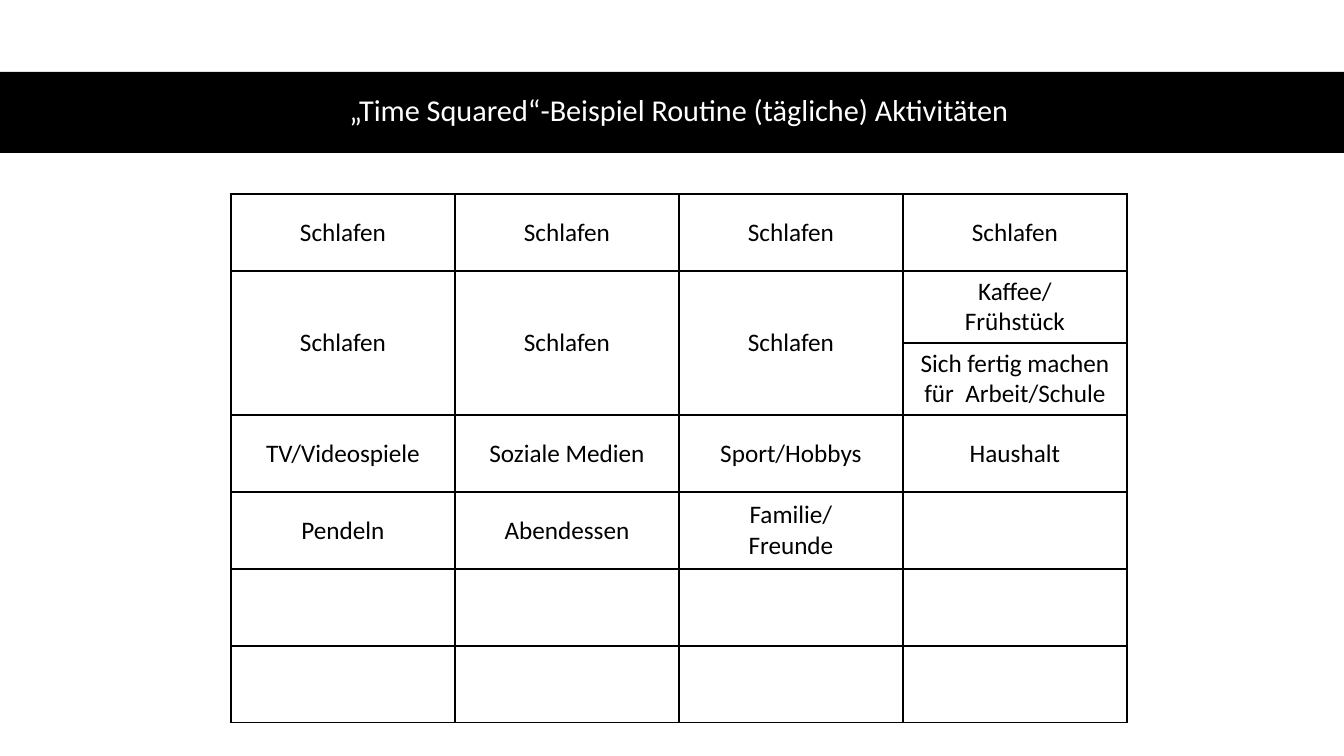
import pptx
import pptx.dml.color
import pptx.enum.text
import pptx.oxml
import pptx.oxml.ns
import pptx.util
from dataclasses import dataclass

TITLE = "„Time Squared“-Beispiel Routine (tägliche) Aktivitäten"
ACTIVITIES = [
    ["Schlafen", "Schlafen", "Schlafen", "Schlafen"],
    ["Schlafen", "Schlafen", "Schlafen", "Kaffee/\vFrühstück"],
    ["", "", "", "Sich fertig machen für  Arbeit/Schule"],
    ["TV/Videospiele", "Soziale Medien", "Sport/Hobbys", "Haushalt"],
    ["Pendeln", "Abendessen", "Familie/\vFreunde", ""],
    ["", "", "", ""],
    ["", "", "", ""],
]
SPLIT_ROWS = (1, 2)
MERGED_COLUMNS = range(3)

SLIDE_SIZE = (1344, 756)
BAND_BOX = (0, 72, 1344, 81)
TITLE_BOX = (61, 71, 1236, 81)
TABLE_LEFT, TABLE_TOP = 231, 194
COLUMN_WIDTH, ROW_HEIGHT, SPLIT_HEIGHT = 224, 77, 72


@dataclass(frozen=True)
class Theme:
    font: str = "Calibri"
    black: str = "000000"
    white: str = "FFFFFF"
    title_size: float = 21.6
    cell_size: float = 18
    border_width: float = 1


THEME = Theme()


def px(length):
    return round(length * 914400 / 100.8)


def color(code):
    return pptx.dml.color.RGBColor.from_string(code)


def write(text_frame, text, size, code):
    text_frame.text = text
    paragraph = text_frame.paragraphs[0]
    paragraph.alignment = pptx.enum.text.PP_ALIGN.CENTER
    for run in paragraph.runs:
        run.font.name = THEME.font
        run.font.size = pptx.util.Pt(size)
        run.font.color.rgb = color(code)
    return paragraph


def add_borders(cell):
    properties = cell._tc.get_or_add_tcPr()
    width = pptx.util.Pt(THEME.border_width)
    for side in ("lnL", "lnR", "lnT", "lnB"):
        properties.append(pptx.oxml.parse_xml(
            f'<a:{side} {pptx.oxml.ns.nsdecls("a")} w="{width}"><a:solidFill>'
            f'<a:srgbClr val="{THEME.black}"/></a:solidFill></a:{side}>'
        ))


def add_title(slide):
    band = slide.shapes.add_shape(
        pptx.enum.shapes.MSO_SHAPE.RECTANGLE, *map(px, BAND_BOX))
    band.shadow.inherit = False
    band.fill.solid()
    band.fill.fore_color.rgb = color(THEME.black)
    band.line.fill.background()
    text_frame = slide.shapes.add_textbox(*map(px, TITLE_BOX)).text_frame
    text_frame.word_wrap = True
    text_frame.vertical_anchor = pptx.enum.text.MSO_ANCHOR.MIDDLE
    paragraph = write(text_frame, TITLE, THEME.title_size, THEME.white)
    paragraph.line_spacing = 0.9


def add_activities(slide):
    row_count, column_count = len(ACTIVITIES), len(ACTIVITIES[0])
    heights = [SPLIT_HEIGHT if index in SPLIT_ROWS else ROW_HEIGHT
               for index in range(row_count)]
    table = slide.shapes.add_table(
        row_count, column_count, px(TABLE_LEFT), px(TABLE_TOP),
        px(COLUMN_WIDTH * column_count), px(sum(heights))).table
    table.first_row = False
    table.horz_banding = False
    for column in table.columns:
        column.width = px(COLUMN_WIDTH)
    for row, height in zip(table.rows, heights):
        row.height = px(height)
    for row_index, labels in enumerate(ACTIVITIES):
        for column_index, label in enumerate(labels):
            cell = table.cell(row_index, column_index)
            add_borders(cell)
            cell.fill.background()
            cell.vertical_anchor = pptx.enum.text.MSO_ANCHOR.MIDDLE
            write(cell.text_frame, label, THEME.cell_size, THEME.black)
    first, last = SPLIT_ROWS
    for column_index in MERGED_COLUMNS:
        table.cell(first, column_index).merge(table.cell(last, column_index))


def main():
    presentation = pptx.Presentation()
    presentation.slide_width, presentation.slide_height = map(px, SLIDE_SIZE)
    slide = presentation.slides.add_slide(presentation.slide_layouts[6])
    add_title(slide)
    add_activities(slide)
    presentation.save("out.pptx")


if __name__ == "__main__":
    main()
